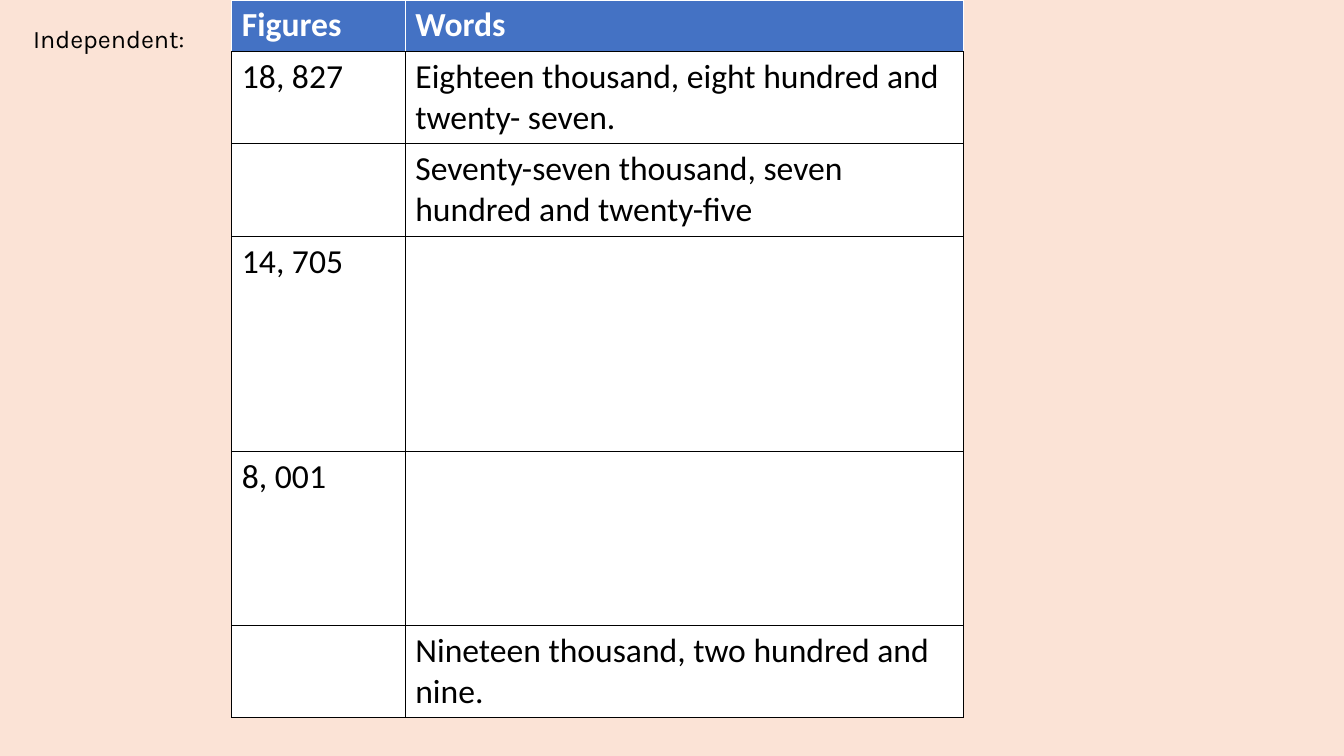
import pptx
import pptx.util
import pptx.dml.color
import pptx.oxml.ns
import lxml.etree

RGB = pptx.dml.color.RGBColor
PEACH = RGB(0xFB, 0xE3, 0xD6)
BLUE = RGB(0x44, 0x72, 0xC4)
WHITE = RGB(255, 255, 255)
BLACK = RGB(0, 0, 0)

TITLE = "Independent:"
ROWS = [
    ("Figures", "Words"),
    ("18, 827", "Eighteen thousand, eight hundred and twenty- seven."),
    ("", "Seventy-seven thousand, seven hundred and twenty-five"),
    ("14, 705", ""),
    ("8, 001", ""),
    ("", "Nineteen thousand, two hundred and nine."),
]
COLS = (1.72, 5.54)
TALL = (0.5, 0.92, 0.92, 2.13, 1.73, 0.91)
LEFT, TOP = 2.3, 0

inch = pptx.util.Inches


def write(frame, text, size=24, font="Calibri", color=BLACK, bold=False):
    frame.word_wrap = True
    run = frame.paragraphs[0].add_run()
    run.text = text
    run.font.size = pptx.util.Pt(size)
    run.font.name = font
    run.font.color.rgb = color
    run.font.bold = bold


def paint(color):
    fill = lxml.etree.Element(pptx.oxml.ns.qn("a:solidFill"))
    lxml.etree.SubElement(fill, pptx.oxml.ns.qn("a:srgbClr"), val=str(color))
    return fill


def border(cell, head, under):
    props = cell._tc.get_or_add_tcPr()
    for spot, side in enumerate(("lnL", "lnR", "lnT", "lnB")):
        dark = not head or side == "lnB"
        width = pptx.util.Pt(1 if dark else 0.75)
        line = lxml.etree.Element(pptx.oxml.ns.qn("a:" + side), w=str(int(width)))
        line.append(paint(BLACK if dark else WHITE))
        props.insert(spot, line)


def main():
    deck = pptx.Presentation()
    deck.slide_width, deck.slide_height = inch(13.33), inch(7.5)
    slide = deck.slides.add_slide(deck.slide_layouts[6])
    slide.background.fill.solid()
    slide.background.fill.fore_color.rgb = PEACH

    grid = slide.shapes.add_table(
        len(ROWS), len(COLS), inch(LEFT), inch(TOP), inch(sum(COLS)), inch(sum(TALL))
    ).table
    for col, width in zip(grid.columns, COLS):
        col.width = inch(width)
    for r, (row, height) in enumerate(zip(ROWS, TALL)):
        grid.rows[r].height = inch(height)
        head = r == 0
        for c, text in enumerate(row):
            cell = grid.cell(r, c)
            cell.fill.solid()
            cell.fill.fore_color.rgb = BLUE if head else WHITE
            border(cell, head, r)
            if text:
                write(cell.text_frame, text, color=WHITE if head else BLACK, bold=head)

    box = slide.shapes.add_textbox(inch(0.23), inch(0.18), inch(12.81), inch(0.4))
    write(box.text_frame, TITLE, size=18, font="Karla")
    deck.save("out.pptx")


if __name__ == "__main__":
    main()
